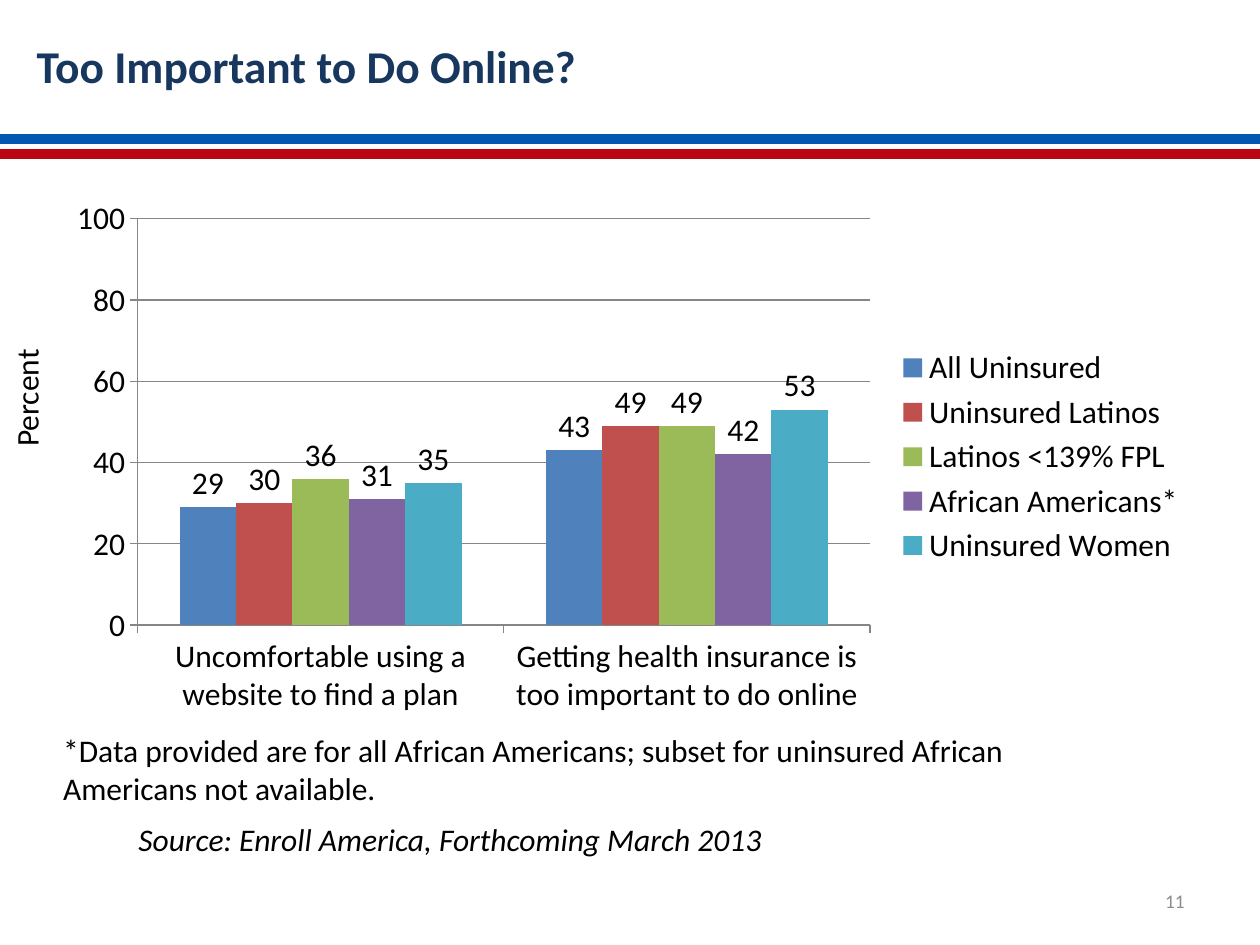
"""Build the slide on comfort with enrolling in health insurance online."""
from dataclasses import dataclass

from pptx import Presentation
from pptx.chart.data import CategoryChartData
from pptx.dml.color import RGBColor
from pptx.enum.chart import XL_CHART_TYPE, XL_LABEL_POSITION, XL_LEGEND_POSITION, XL_TICK_MARK
from pptx.enum.shapes import MSO_SHAPE
from pptx.enum.text import MSO_ANCHOR, PP_ALIGN
from pptx.util import Pt

FONT = "Calibri"
BLACK = "000000"
AXIS_GRAY = "868686"


@dataclass
class Stripe:
    """A coloured band across the slide."""
    top: float
    color: str


@dataclass
class Group:
    """A surveyed group with its percentages."""
    name: str
    values: tuple
    color: str


STRIPES = [Stripe(77.8, "0058B0"), Stripe(84.2, "FFFFFF"), Stripe(86.4, "BB0512")]
CATEGORIES = [
    "Uncomfortable using a website to find a plan",
    "Getting health insurance is too important to do online",
]
GROUPS = [
    Group("All Uninsured", (29, 43), "4F81BD"),
    Group("Uninsured Latinos", (30, 49), "C0504D"),
    Group("Latinos <139% FPL", (36, 49), "9BBB59"),
    Group("African Americans*", (31, 42), "8064A2"),
    Group("Uninsured Women", (35, 53), "4BACC6"),
]


def paint(color_holder, color: str) -> None:
    """Make a fill solid in a hex colour."""
    color_holder.solid()
    color_holder.fore_color.rgb = RGBColor.from_string(color)


def place(shape, left: float, top: float, width: float, height: float) -> None:
    """Position a shape in points."""
    shape.left, shape.top, shape.width, shape.height = map(Pt, (left, top, width, height))


def write(shape, text: str, *, size: float = 18, color: str = BLACK, bold: bool = False,
          italic: bool = False, align=PP_ALIGN.LEFT, anchor=MSO_ANCHOR.TOP) -> None:
    """Write one formatted paragraph into a shape."""
    frame = shape.text_frame
    frame.word_wrap = True
    frame.vertical_anchor = anchor
    paragraph = frame.paragraphs[0]
    paragraph.alignment = align
    run = paragraph.add_run()
    run.text = text
    font = run.font
    font.name, font.size, font.bold, font.italic = FONT, Pt(size), bold, italic
    font.color.rgb = RGBColor.from_string(color)


def add_text(slide, text: str, left: float, top: float, width: float, height: float,
             rotation: float = 0, **text_format) -> None:
    """Add a text box with one formatted paragraph."""
    box = slide.shapes.add_textbox(*map(Pt, (left, top, width, height)))
    box.rotation = rotation
    write(box, text, **text_format)


def add_stripe(slide, stripe: Stripe) -> None:
    """Draw a band over the full slide width."""
    shape = slide.shapes.add_shape(MSO_SHAPE.RECTANGLE, 0, Pt(stripe.top), Pt(720), Pt(3.6))
    shape.shadow.inherit = False
    paint(shape.fill, stripe.color)
    paint(shape.line.fill, stripe.color)
    shape.line.width = Pt(2)


def style_line(line) -> None:
    """Give an axis or gridline a thin gray stroke."""
    paint(line.fill, AXIS_GRAY)
    line.width = Pt(0.75)


def add_survey_chart(slide) -> None:
    """Add the clustered columns for all groups."""
    data = CategoryChartData(number_format="0")
    data.categories = CATEGORIES
    for group in GROUPS:
        data.add_series(group.name, group.values)
    chart = slide.shapes.add_chart(
        XL_CHART_TYPE.COLUMN_CLUSTERED, Pt(31), Pt(108), Pt(653.8), Pt(306), data).chart
    chart.has_title = False
    chart.font.name, chart.font.size = FONT, Pt(18)
    chart.font.color.rgb = RGBColor.from_string(BLACK)
    chart.has_legend = True
    chart.legend.position = XL_LEGEND_POSITION.RIGHT
    chart.legend.include_in_layout = False

    for axis in (chart.category_axis, chart.value_axis):
        axis.major_tick_mark = XL_TICK_MARK.OUTSIDE
        axis.minor_tick_mark = XL_TICK_MARK.NONE
        style_line(axis.format.line)
    value_axis = chart.value_axis
    value_axis.minimum_scale, value_axis.maximum_scale = 0, 100
    value_axis.major_unit = 20
    value_axis.has_major_gridlines = True
    style_line(value_axis.major_gridlines.format.line)

    plot = chart.plots[0]
    plot.gap_width, plot.overlap = 150, 0
    plot.vary_by_categories = False
    for series, group in zip(plot.series, GROUPS):
        paint(series.format.fill, group.color)
        series.invert_if_negative = False
        series.data_labels.show_value = True
        series.data_labels.position = XL_LABEL_POSITION.OUTSIDE_END


def main() -> None:
    """Assemble and save the slide."""
    presentation = Presentation()
    presentation.slide_width, presentation.slide_height = Pt(720), Pt(540)
    slide = presentation.slides.add_slide(presentation.slide_layouts[5])
    for stripe in STRIPES:
        add_stripe(slide, stripe)
    title = slide.shapes.title
    place(title, 13.7, 18, 648, 90)
    write(title, "Too Important to Do Online?", size=26, color="17375E", bold=True)
    add_survey_chart(slide)
    add_text(slide, "11", 516, 500.5, 168, 28.8, size=11, color="8C8C8C",
             align=PP_ALIGN.RIGHT, anchor=MSO_ANCHOR.MIDDLE)
    add_text(slide, "Percent", -69, 213, 168, 29, rotation=270, align=PP_ALIGN.CENTER)
    add_text(slide, "Source: Enroll America, Forthcoming March 2013",
             72, 465, 558, 29, italic=True)
    add_text(slide, "*Data provided are for all African Americans; subset for uninsured "
             "African Americans not available.", 29, 414, 558, 51)
    presentation.save("out.pptx")


if __name__ == "__main__":
    main()
